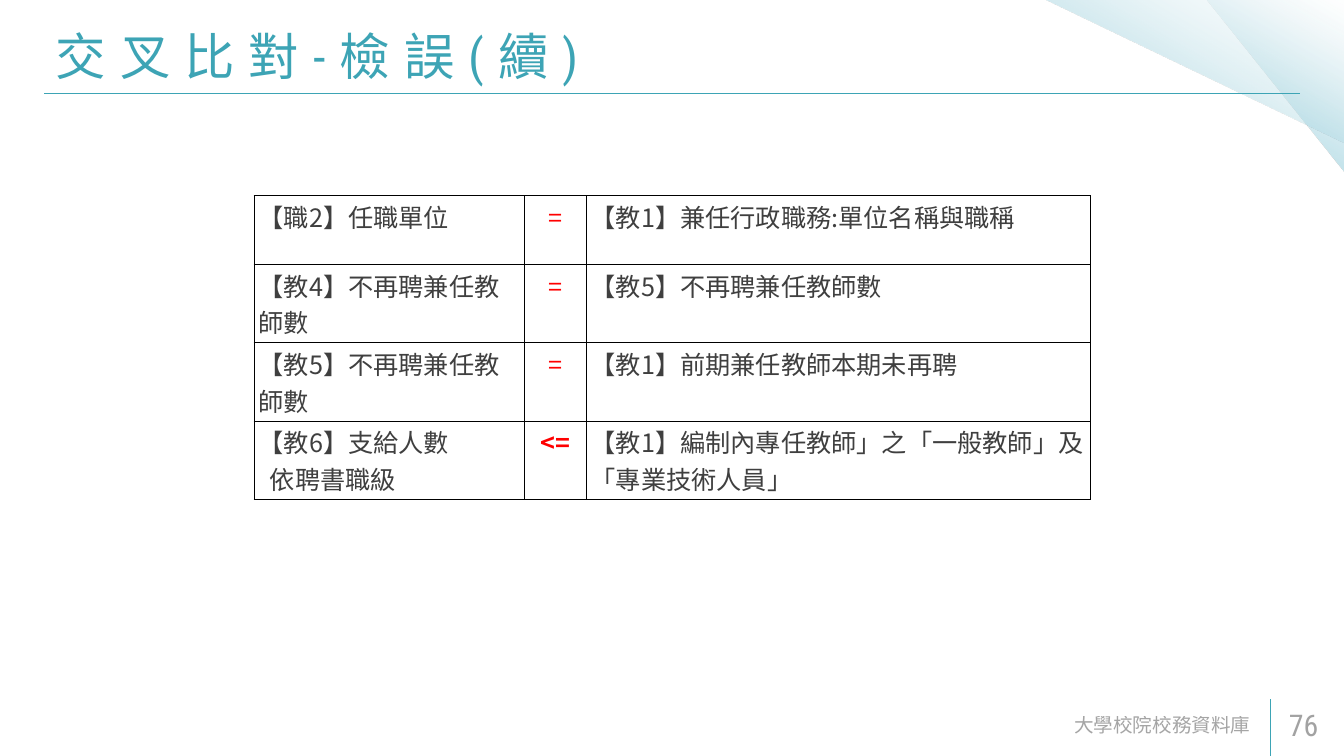
from dataclasses import dataclass

from lxml.etree import SubElement as Sub
from pptx import Presentation
from pptx.dml.color import RGBColor
from pptx.enum.shapes import MSO_CONNECTOR as Connector, MSO_SHAPE as Preset
from pptx.enum.text import MSO_ANCHOR as Anchor, PP_ALIGN as Align
from pptx.oxml.ns import qn
from pptx.util import Inches, Pt


@dataclass(frozen=True)
class Theme:
    accent: str = "3DA4B5"
    ink: str = "3F3F3F"
    operator: str = "FF0000"
    footer: str = "808080"
    number: str = "A2A2A2"
    border: str = "000000"
    glow: tuple = ((0, "97D1E0", 100), (50, "AAD7E2", 44), (100, "E0F0F4", 0))
    heading_font: str = "Roboto Condensed"
    footer_font: str = "Roboto"
    table_font: str = "Noto Sans CJK SC"
    title_size: int = 54
    number_size: int = 32
    table_size: int = 27
    footer_size: int = 21


THEME = Theme()
WIDTH, HEIGHT = 20, 11.25
COLUMN_SPANS = (20.15, 4.55, 37.55)
ONE_LINE_SPAN, TWO_LINE_SPAN = 9.12, 10.35
ROW_SPANS = (ONE_LINE_SPAN, TWO_LINE_SPAN, TWO_LINE_SPAN, TWO_LINE_SPAN)
RULES = (
    (["【職2】任職單位"], "=", ["【教1】兼任行政職務:單位名稱與職稱"]),
    (["【教4】不再聘兼任教師數"], "=", ["【教5】不再聘兼任教師數"]),
    (["【教5】不再聘兼任教師數"], "=", ["【教1】前期兼任教師本期未再聘"]),
    (["【教6】支給人數", "依聘書職級"], "<=",
     ["【教1】編制內專任教師」之「一般教師」及「專業技術人員」"]),
)


def col(count):
    return Inches(WIDTH * count / 100)


def row(count):
    return Inches(HEIGHT * count / 100)


def add_color(parent, color, alpha=100):
    fill = Sub(parent, qn("a:srgbClr"), val=color)
    if alpha < 100:
        Sub(fill, qn("a:alpha"), val=str(alpha * 1000))


def write(paragraph, text, *, font, size, color, align=Align.LEFT,
          bold=False, spacing=0, alpha=100, indent=0):
    paragraph.alignment = align
    if indent:
        paragraph._p.get_or_add_pPr().set("marL", str(Pt(indent)))
    run = paragraph.add_run()
    run.text = text
    run.font.name = font
    run.font.size = Pt(size)
    run.font.bold = bold
    run.font.color.rgb = RGBColor.from_string(color)
    properties = run._r.get_or_add_rPr()
    Sub(properties, qn("a:ea"), typeface=font)
    if spacing:
        properties.set("spc", str(spacing * 100))
    if alpha < 100:
        solid = properties.find(qn("a:solidFill"))
        Sub(solid[0], qn("a:alpha"), val=str(alpha * 1000))


def add_label(slide, left, top, width, height, text, **style):
    frame = slide.shapes.add_textbox(
        col(left), row(top), col(width), row(height)).text_frame
    frame.word_wrap = True
    frame.vertical_anchor = Anchor.MIDDLE
    frame.margin_left = frame.margin_right = Inches(0.18)
    frame.margin_top = frame.margin_bottom = Inches(0.09)
    write(frame.paragraphs[0], text, **style)


def add_corner(slide, left, width, height):
    corner = slide.shapes.add_shape(
        Preset.RIGHT_TRIANGLE, col(left), 0, col(width), row(height))
    corner.rotation = 180
    corner.shadow.inherit = False
    corner.line.fill.background()
    corner.fill.gradient()
    gradient = corner._element.spPr.find(qn("a:gradFill"))
    stops = gradient.find(qn("a:gsLst"))
    stops.clear()
    for position, color, alpha in THEME.glow:
        stop = Sub(stops, qn("a:gs"), pos=str(position * 1000))
        add_color(stop, color, alpha)
    gradient.find(qn("a:lin")).set("ang", str(120 * 60000))


def add_rule(slide, start, end):
    rule = slide.shapes.add_connector(
        Connector.STRAIGHT, col(start[0]), row(start[1]), col(end[0]), row(end[1]))
    rule.line.color.rgb = RGBColor.from_string(THEME.accent)
    rule.line.width = Pt(1)
    Sub(rule._element.spPr, qn("a:effectLst"))


def fill_cell(cell, lines, **style):
    cell.margin_left = cell.margin_right = Inches(0.07)
    cell.margin_top = cell.margin_bottom = Inches(0.04)
    properties = cell._tc.get_or_add_tcPr()
    for side in ("lnL", "lnR", "lnT", "lnB"):
        edge = Sub(properties, qn(f"a:{side}"), w=str(Pt(1)))
        add_color(Sub(edge, qn("a:solidFill")), THEME.border)
    cell.fill.background()
    for index, line in enumerate(lines):
        frame = cell.text_frame
        paragraph = frame.add_paragraph() if index else frame.paragraphs[0]
        write(paragraph, line, font=THEME.table_font, size=THEME.table_size,
              indent=12 * index, **style)


def add_rules_table(slide, left, top):
    table = slide.shapes.add_table(
        len(RULES), len(COLUMN_SPANS), col(left), row(top),
        col(sum(COLUMN_SPANS)), row(sum(ROW_SPANS))).table
    table.first_row = table.horz_banding = False
    for column, span in zip(table.columns, COLUMN_SPANS):
        column.width = col(span)
    for line, span in zip(table.rows, ROW_SPANS):
        line.height = row(span)
    for index, (source, operator, target) in enumerate(RULES):
        fill_cell(table.cell(index, 0), source, color=THEME.ink)
        fill_cell(table.cell(index, 1), [operator], color=THEME.operator,
                  align=Align.CENTER, bold=operator == "<=")
        fill_cell(table.cell(index, 2), target, color=THEME.ink)


def main():
    deck = Presentation()
    deck.slide_width, deck.slide_height = Inches(WIDTH), Inches(HEIGHT)
    slide = deck.slides.add_slide(deck.slide_layouts[6])
    add_corner(slide, 89.8, 10.2, 22.84)
    add_corner(slide, 77.7, 22.4, 18.93)
    add_rule(slide, (3.3, 12.36), (96.7, 12.36))
    add_rule(slide, (94.55, 100), (94.55, 92.44))
    add_label(slide, 3.25, 1.87, 91.55, 10.93, "交叉比對-檢誤(續)",
              font=THEME.heading_font, size=THEME.title_size,
              color=THEME.accent, spacing=15)
    add_label(slide, 51.45, 93.24, 42.5, 5.33, "大學校院校務資料庫",
              font=THEME.footer_font, size=THEME.footer_size,
              color=THEME.footer, alpha=70, align=Align.RIGHT)
    add_label(slide, 95, 93.24, 4.95, 5.33, "76",
              font=THEME.heading_font, size=THEME.number_size, color=THEME.number)
    add_rules_table(slide, 18.9, 25.87)
    deck.save("out.pptx")


if __name__ == "__main__":
    main()
